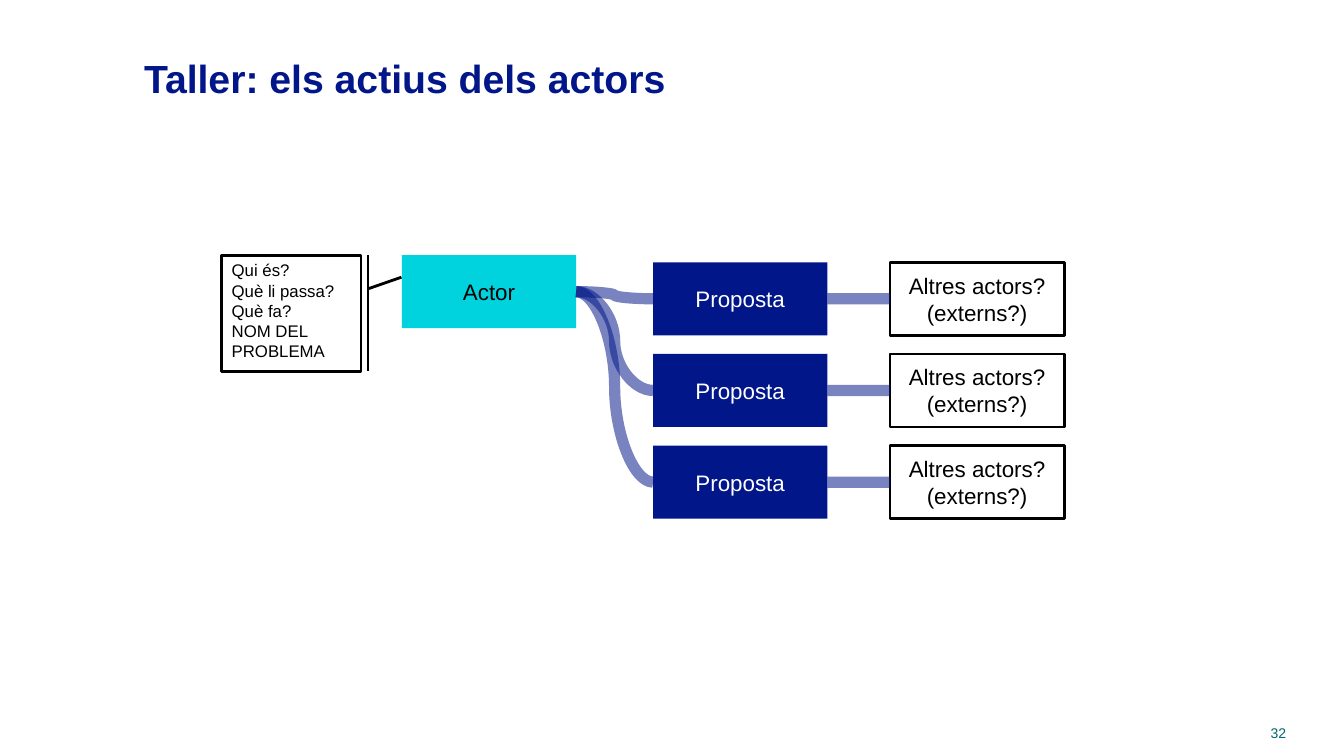
from lxml import etree
from pptx import Presentation
from pptx import util as u
from pptx.dml.color import RGBColor
from pptx.enum import shapes, text
from pptx.oxml import ns

COLORS = {
    "navy": "001689",
    "cyan": "00D3DE",
    "teal": "00676C",
    "black": "000000",
    "white": "FFFFFF",
}
BOX_WIDTH, BOX_HEIGHT = 4.39, 1.84
PROPOSAL_LEFT, OTHERS_LEFT = 16.46, 22.43
ROWS_TOP, ROW_PITCH, ROW_COUNT = 6.61, 2.31, 3
LEFT, RIGHT = 1, 3


def rgb(name):
    return RGBColor.from_string(COLORS[name])


def write(shape, content, size, color, align, anchor, bold=False):
    frame = shape.text_frame
    frame.text = content
    frame.word_wrap = True
    frame.vertical_anchor = anchor
    for paragraph in frame.paragraphs:
        paragraph.alignment = align
        for run in paragraph.runs:
            run.font.name = "Arial"
            run.font.size = u.Pt(size)
            run.font.bold = bold
            run.font.color.rgb = rgb(color)


def add_label(slide, bounds, content, size, color, align, anchor, bold=False):
    label = slide.shapes.add_textbox(*map(u.Cm, bounds))
    write(label, content, size, color, align, anchor, bold)


def style(shape, fill=None, line=None):
    shape.shadow.inherit = False
    if fill:
        shape.fill.solid()
        shape.fill.fore_color.rgb = rgb(fill)
    else:
        shape.fill.background()
    if line:
        shape.line.color.rgb = rgb(line)
        shape.line.width = u.Pt(2)
    else:
        shape.line.fill.background()


def add_box(slide, left, top, content, color, fill=None, line=None):
    box = slide.shapes.add_shape(
        shapes.MSO_SHAPE.RECTANGLE,
        u.Cm(left), u.Cm(top), u.Cm(BOX_WIDTH), u.Cm(BOX_HEIGHT),
    )
    style(box, fill, line)
    write(box, content, 16, color, text.PP_ALIGN.CENTER, text.MSO_ANCHOR.MIDDLE)
    return box


def add_callout(slide, bounds, content):
    callout = slide.shapes.add_shape(
        shapes.MSO_SHAPE.LINE_CALLOUT_1_BORDER_AND_ACCENT_BAR, *map(u.Cm, bounds)
    )
    for index, value in enumerate((0.29, 1.05, 0.19, 1.29)):
        callout.adjustments[index] = value
    style(callout, "white", "black")
    write(callout, content, 12, "black", text.PP_ALIGN.LEFT, text.MSO_ANCHOR.TOP)


def add_curve(slide, source, target):
    curve = slide.shapes.add_connector(shapes.MSO_CONNECTOR.CURVE, 0, 0, 0, 0)
    curve.begin_connect(source, RIGHT)
    curve.end_connect(target, LEFT)
    curve.line.color.rgb = rgb("navy")
    curve.line.width = u.Pt(8)
    properties = curve._element.spPr
    color = properties.find(".//" + ns.qn("a:srgbClr"))
    etree.SubElement(color, ns.qn("a:alpha"), val="52000")
    etree.SubElement(properties, ns.qn("a:effectLst"))


def main():
    presentation = Presentation()
    presentation.slide_width = u.Cm(33.87)
    presentation.slide_height = u.Cm(19.05)
    slide = presentation.slides.add_slide(presentation.slide_layouts[6])

    add_label(slide, (3.38, 1.17, 28.85, 1.57), "Taller: els actius dels actors",
              28, "navy", text.PP_ALIGN.LEFT, text.MSO_ANCHOR.MIDDLE, bold=True)
    add_label(slide, (30.53, 18.14, 2.13, 0.74), "32",
              10, "teal", text.PP_ALIGN.RIGHT, text.MSO_ANCHOR.TOP)

    actor = add_box(slide, 10.13, 6.43, "Actor", "black", fill="cyan")
    add_callout(slide, (5.59, 6.43, 3.51, 2.93),
                "Qui és?\nQuè li passa?\nQuè fa?\nNOM DEL PROBLEMA")

    for row in range(ROW_COUNT):
        top = ROWS_TOP + row * ROW_PITCH
        proposal = add_box(slide, PROPOSAL_LEFT, top, "Proposta", "white", fill="navy")
        others = add_box(slide, OTHERS_LEFT, top, "Altres actors?\n(externs?)",
                         "black", line="black")
        add_curve(slide, actor, proposal)
        add_curve(slide, proposal, others)

    presentation.save("out.pptx")


if __name__ == "__main__":
    main()
